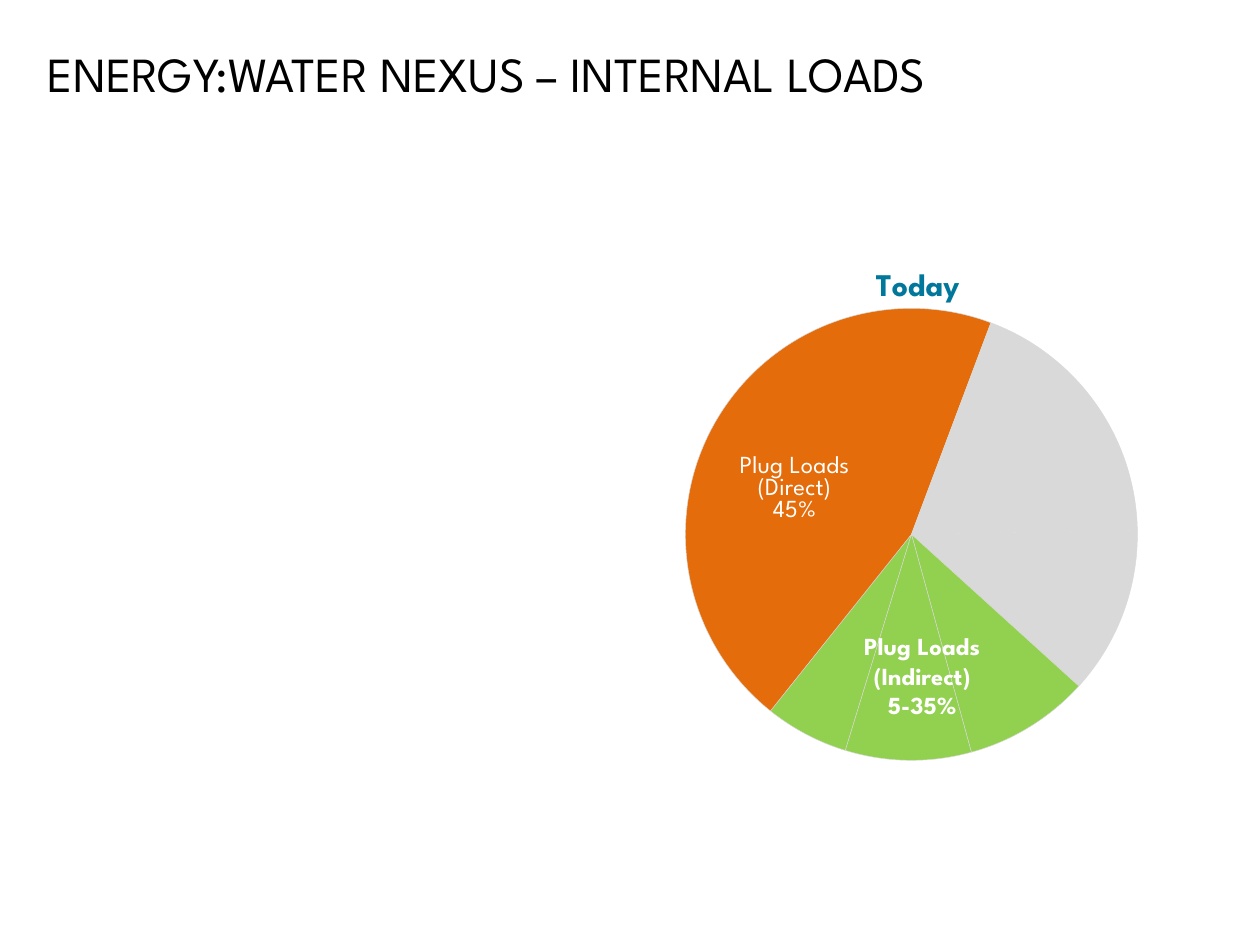
from lxml import etree
from pptx import Presentation
from pptx import util as u
from pptx.chart.data import CategoryChartData
from pptx.dml.color import RGBColor
from pptx.enum import chart as ch, text as t
from pptx.oxml.ns import qn

HEADING_FONT = "League Spartan"
GREEN, ORANGE, GREY = "92D050", "E46C0A", "D9D9D9"
LOADS = [(6, GREEN), (45, ORANGE), (15, GREY), (4, GREY),
         (2, GREY), (10, GREY), (9, GREEN), (9, GREEN)]


def rgb(code):
    """Return the colour for a hex string."""
    return RGBColor.from_string(code)


def style(font, size, color, bold=False, name=HEADING_FONT):
    """Set size, colour, weight and typeface of a font."""
    font.size, font.bold, font.name = u.Pt(size), bold, name
    font.color.rgb = rgb(color)


def add_run(paragraph, words, *font_settings):
    """Append one styled run to a paragraph."""
    run = paragraph.add_run()
    run.text = words
    style(run.font, *font_settings)


def add_text(slide, box, lines, size, color, bold=False, align=t.PP_ALIGN.LEFT):
    """Add a text box with one paragraph per line."""
    frame = slide.shapes.add_textbox(*(u.Cm(side) for side in box)).text_frame
    frame.word_wrap = True
    for index, words in enumerate(lines):
        paragraph = frame.add_paragraph() if index else frame.paragraphs[0]
        paragraph.alignment = align
        add_run(paragraph, words, size, color, bold)


def set_layout(parent, position, **values):
    """Give a chart part a manual layout at a child position."""
    for old in parent.findall(qn("c:layout")):
        parent.remove(old)
    layout = etree.Element(qn("c:layout"))
    manual = etree.SubElement(layout, qn("c:manualLayout"))
    for tag, value in values.items():
        etree.SubElement(manual, qn(f"c:{tag}")).set("val", str(value))
    parent.insert(position, layout)


def add_load_pie(slide):
    """Add the pie of internal loads with its title and direct-load label."""
    loads = CategoryChartData()
    loads.categories = [str(number) for number in range(1, len(LOADS) + 1)]
    loads.add_series("Series 1", [share for share, _ in LOADS])
    box = (u.Cm(side) for side in (12.24, 4.98, 12.52, 11.25))
    pie = slide.shapes.add_chart(ch.XL_CHART_TYPE.PIE, *box, loads).chart
    style(pie.font, 10, "000000", name="Calibri")
    pie.has_legend = False
    add_run(pie.chart_title.text_frame.paragraphs[0], "Today", 18, "01789B", True)

    plot = pie.plots[0]
    plot.vary_by_categories = True
    series = plot.series[0]
    pie_xml = series._element.getparent()
    angle = pie_xml.find(qn("c:firstSliceAng"))
    if angle is None:
        angle = etree.SubElement(pie_xml, qn("c:firstSliceAng"))
    angle.set("val", "197")
    set_layout(pie_xml.getparent(), 0, layoutTarget="inner", xMode="edge",
               yMode="edge", x=0.04, y=0.11, w=0.9, h=0.81)

    for index, (_, color) in enumerate(LOADS):
        wedge = series.points[index].format
        wedge.fill.solid()
        wedge.fill.fore_color.rgb = rgb(color)
        wedge.line.color.rgb = rgb(GREY)
        wedge.line.width = u.Pt(0.25)

    direct = series.points[1].data_label
    frame = direct.text_frame
    add_run(frame.paragraphs[0], "Plug Loads (Direct)", 14, "FFFFFF")
    add_run(frame.add_paragraph(), "45%", 14, "FFFFFF")
    direct.position = ch.XL_LABEL_POSITION.CENTER
    set_layout(series._element.find(f".//{qn('c:dLbl')}"), 1, x=-0.03, y=0.02)


def main():
    """Build the slide and save it."""
    deck = Presentation()
    deck.slide_width, deck.slide_height = u.Cm(25.4), u.Cm(19.05)
    slide = deck.slides.add_slide(deck.slide_layouts[6])
    add_text(slide, (0.71, 0.76, 23.93, 2.34),
             ["ENERGY:WATER NEXUS – INTERNAL LOADS"], 28, "000000")
    add_load_pie(slide)
    add_text(slide, (17.04, 12.6, 3.1, 2.06), ["Plug Loads", "(Indirect)", "5-35%"],
             14, "FFFFFF", True, t.PP_ALIGN.CENTER)
    deck.save("out.pptx")


if __name__ == "__main__":
    main()
